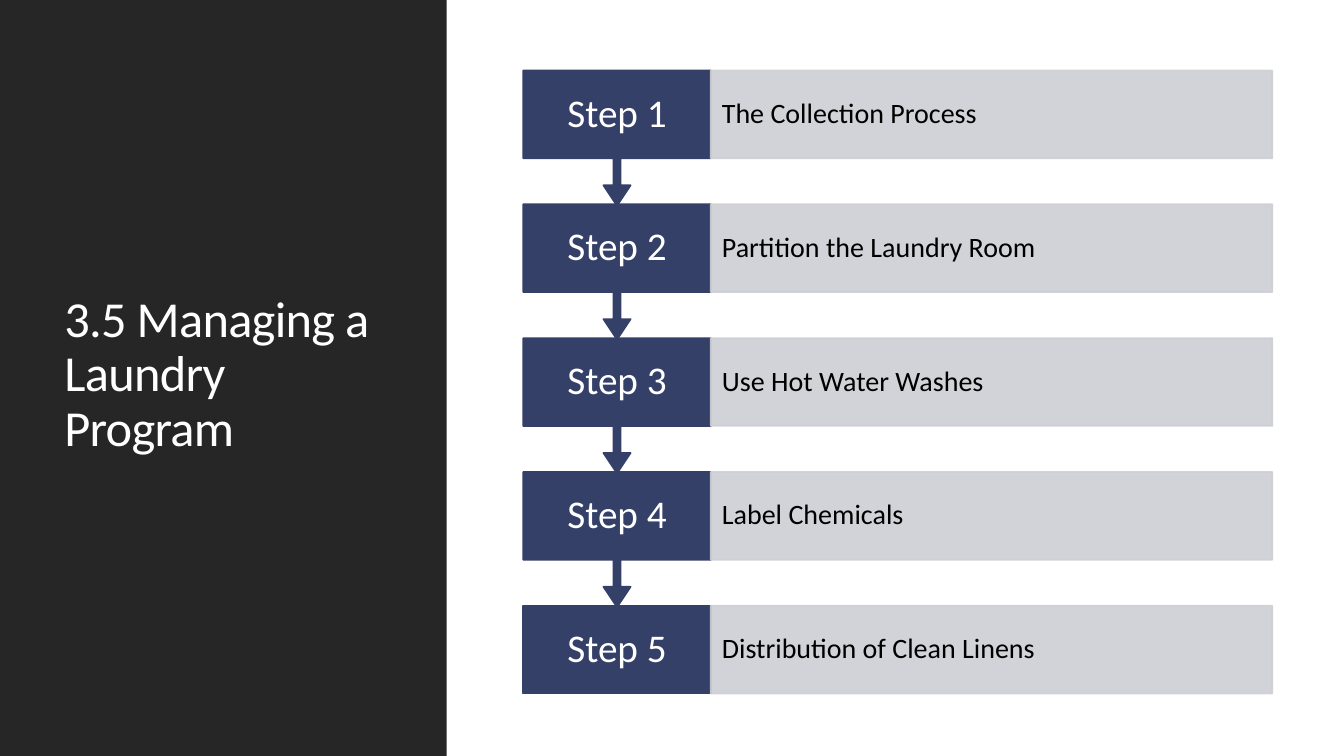
from pptx import Presentation
from pptx.dml.color import RGBColor
from pptx.enum.shapes import MSO_SHAPE
from pptx.enum.text import MSO_ANCHOR, PP_ALIGN
from pptx.oxml.ns import qn
from pptx.util import Inches, Pt
from lxml.etree import SubElement

COLORS = {
    "panel": "262626",
    "step": "344068",
    "detail": "CECFD4",
    "light": "FFFFFF",
    "dark": "000000",
}
STEPS = [
    "The Collection Process",
    "Partition the Laundry Room",
    "Use Hot Water Washes",
    "Label Chemicals",
    "Distribution of Clean Linens",
]
BAR_HEIGHT = 0.87
CALLOUT_HEIGHT = 1.34
STEP_WIDTH = 1.86
CALLOUT_ADJUSTMENTS = [0.05, 0.1, 0.15, 0.65]


def rgb(name):
    return RGBColor.from_string(COLORS[name])


def add_block(slide, kind, box, color, outlined=True):
    block = slide.shapes.add_shape(kind, *map(Inches, box))
    block.shadow.inherit = False
    block.fill.solid()
    block.fill.fore_color.rgb = rgb(color)
    if outlined:
        block.line.color.rgb = rgb(color)
        block.line.width = Pt(1.25)
    else:
        block.line.fill.background()
    return block


def set_opacity(block, percent):
    """Apply one opacity to the fill and the outline."""
    for color in block._element.spPr.iter(qn("a:srgbClr")):
        SubElement(color, qn("a:alpha"), val=str(percent * 1000))


def write_text(shape, text, size, color, align=PP_ALIGN.LEFT, side=0.1, spacing=None):
    frame = shape.text_frame
    frame_format = {
        "word_wrap": True,
        "vertical_anchor": MSO_ANCHOR.MIDDLE,
        "margin_left": Inches(side),
        "margin_right": Inches(side),
    }
    for name, value in frame_format.items():
        setattr(frame, name, value)
    paragraph = frame.paragraphs[0]
    paragraph.alignment = align
    paragraph.line_spacing = 0.9
    run = paragraph.add_run()
    run.text = text
    for name, value in {"name": "Calibri", "size": Pt(size)}.items():
        setattr(run.font, name, value)
    run.font.color.rgb = rgb(color)
    if spacing is not None:
        run.font._element.set("spc", str(round(spacing * 100)))


def add_title_panel(slide, left, top, width, height):
    add_block(slide, MSO_SHAPE.RECTANGLE, (left, top, width, height), "panel", outlined=False)
    title_box = (left + 0.54, top + 0.57, 3.37, 6.31)
    title = slide.shapes.add_textbox(*map(Inches, title_box))
    write_text(title, "3.5 Managing a Laundry Program", 36, "light", spacing=-0.5)


def add_step(slide, left, top, width, number, detail, is_last):
    """Add a numbered block, with an arrow down unless last, and its detail bar."""
    if is_last:
        step = add_block(slide, MSO_SHAPE.RECTANGLE,
                         (left, top, STEP_WIDTH, BAR_HEIGHT), "step")
    else:
        step = add_block(slide, MSO_SHAPE.DOWN_ARROW_CALLOUT,
                         (left, top, STEP_WIDTH, CALLOUT_HEIGHT), "step")
        for index, value in enumerate(CALLOUT_ADJUSTMENTS):
            step.adjustments[index] = value
    write_text(step, f"Step {number}", 28, "light", PP_ALIGN.CENTER, side=0.13)

    bar_box = (left + STEP_WIDTH, top, width - STEP_WIDTH, BAR_HEIGHT)
    bar = add_block(slide, MSO_SHAPE.RECTANGLE, bar_box, "detail")
    set_opacity(bar, 90)
    write_text(bar, detail, 20, "dark", side=0.11)


def add_step_list(slide, left, top, width, height):
    pitch = (height - BAR_HEIGHT) / (len(STEPS) - 1)
    # Bottom step first, so each arrow tip lies over the step below it
    for index in reversed(range(len(STEPS))):
        add_step(slide, left, top + index * pitch, width, index + 1,
                 STEPS[index], is_last=index == len(STEPS) - 1)


def main():
    presentation = Presentation()
    presentation.slide_width = Inches(13.33)
    presentation.slide_height = Inches(7.5)
    slide = presentation.slides.add_slide(presentation.slide_layouts[6])
    slide.background.fill.solid()
    slide.background.fill.fore_color.rgb = rgb("light")
    add_title_panel(slide, 0, 0, 4.43, 7.5)
    add_step_list(slide, 5.19, 0.7, 7.43, 6.18)
    presentation.save("out.pptx")


if __name__ == "__main__":
    main()
